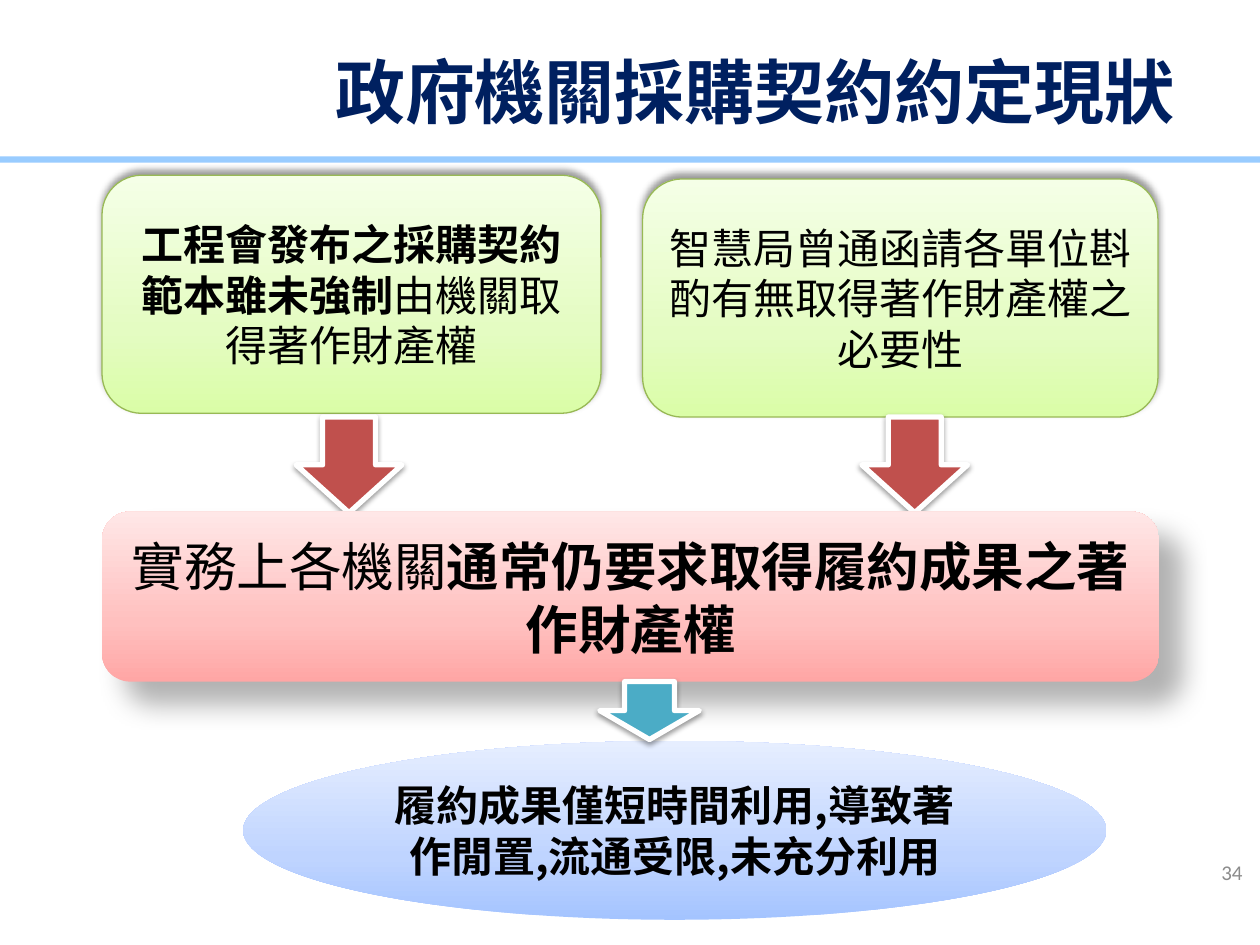
"""Builds the slide on the state of government procurement contracts."""
from lxml import etree
from pptx import Presentation
from pptx.dml.color import RGBColor
from pptx.enum import shapes, text
from pptx.oxml import ns
from pptx.util import Inches, Pt

MSO = shapes.MSO_SHAPE
CJK = "Noto Sans CJK SC"
GREEN = ("DAFDA7", "E4FCC2", "F5FFE7")
RED = ("FFA6A5", "FFC0BF", "FFE7E7")
BLUE = ("A4C4FF", "BFD4FF", "E6EEFF")
CARD_SHADOW = (40, 4, 3, 270)
ARROW_SHADOW = (38, 3.1, 1.6, 90)

prs = Presentation()
prs.slide_width, prs.slide_height = Inches(10), Inches(7.5)
s = prs.slides.add_slide(prs.slide_layouts[6])


def add_shape(kind, box, fill, line=None, width=0.75, shadow=None, rotation=0):
    sp = s.shapes.add_shape(kind, *map(Inches, box))
    sp.rotation = rotation
    sp.shadow.inherit = False
    pr = sp._element.spPr
    if isinstance(fill, str):
        sp.fill.solid()
        sp.fill.fore_color.rgb = RGBColor.from_string(fill)
    else:
        stops = "".join(
            f'<a:gs pos="{pos}"><a:srgbClr val="{color}"/></a:gs>'
            for pos, color in zip((0, 35000, 100000), fill))
        pr.insert(2, etree.fromstring(
            f'<a:gradFill {ns.nsdecls("a")} rotWithShape="1"><a:gsLst>{stops}</a:gsLst>'
            '<a:lin ang="16200000" scaled="0"/></a:gradFill>'))
    if line:
        sp.line.color.rgb = RGBColor.from_string(line)
        sp.line.width = Pt(width)
    else:
        sp.line.fill.background()
    if shadow:
        alpha, blur, dist, angle = shadow
        pr.find(ns.qn("a:effectLst")).append(etree.fromstring(
            f'<a:outerShdw {ns.nsdecls("a")} blurRad="{Pt(blur)}" dist="{Pt(dist)}" '
            f'dir="{angle * 60000}" algn="ctr" rotWithShape="0"><a:srgbClr val="000000">'
            f'<a:alpha val="{alpha * 1000}"/></a:srgbClr></a:outerShdw>'))
    return sp


def add_text(sp, runs, size, color="000000", font=CJK, align=text.PP_ALIGN.CENTER):
    tf = sp.text_frame
    tf.word_wrap = True
    tf.vertical_anchor = text.MSO_ANCHOR.MIDDLE
    p = tf.paragraphs[0]
    p.alignment = align
    for words, bold in runs:
        r = p.add_run()
        r.text = words
        r.font.name = font
        r.font.size = Pt(size)
        r.font.bold = bold
        r.font.color.rgb = RGBColor.from_string(color)
        ea = etree.SubElement(r._r.get_or_add_rPr(), ns.qn("a:ea"))
        ea.set("typeface", CJK)


add_shape(MSO.RECTANGLE, (-0.04, 1.24, 10.06, 0.05), "99CCFF")
title = s.shapes.add_textbox(*map(Inches, (2.17, 0.29, 7.64, 0.86)))
add_text(title, [("政府機關採購契約約定現狀", True)], 40, "002060")
number = s.shapes.add_textbox(*map(Inches, (7.88, 6.67, 2.08, 0.5)))
add_text(number, [("34", False)], 12, "8C8C8C", "Calibri", text.PP_ALIGN.RIGHT)

cards = [
    ((0.81, 1.39, 3.96, 1.89),
     [("工程會發布之採購契約範本雖未強制", True), ("由機關取得著作財產權", False)]),
    ((5.1, 1.42, 4.09, 1.89),
     [("智慧局曾通函請各單位斟酌有無取得著作財產權之必要性", False)]),
]
for box, runs in cards:
    sp = add_shape(MSO.ROUNDED_RECTANGLE, box, GREEN, "98B955", shadow=CARD_SHADOW)
    add_text(sp, runs, 24)

for left in (2.39, 6.88):
    add_shape(MSO.RIGHT_ARROW, (left, 3.27, 0.76, 0.84), "C0504D", "FFFFFF", 3,
              ARROW_SHADOW, rotation=90)

practice = add_shape(MSO.ROUNDED_RECTANGLE, (0.81, 4.06, 8.39, 1.35), RED,
                     shadow=(30, 15, 18, 45))
add_text(practice, [("實務上各機關", False), ("通常仍要求取得履約成果之著作財產權", True)], 30)

result = add_shape(MSO.OVAL, (1.93, 5.88, 6.85, 1.42), BLUE)
add_text(result, [("履約成果僅短時間利用,導致著作閒置,流通受限,未充分利用", True)], 24)
add_shape(MSO.DOWN_ARROW, (4.76, 5.41, 0.79, 0.46), "4BACC6", "FFFFFF", 3, ARROW_SHADOW)

prs.save("out.pptx")
